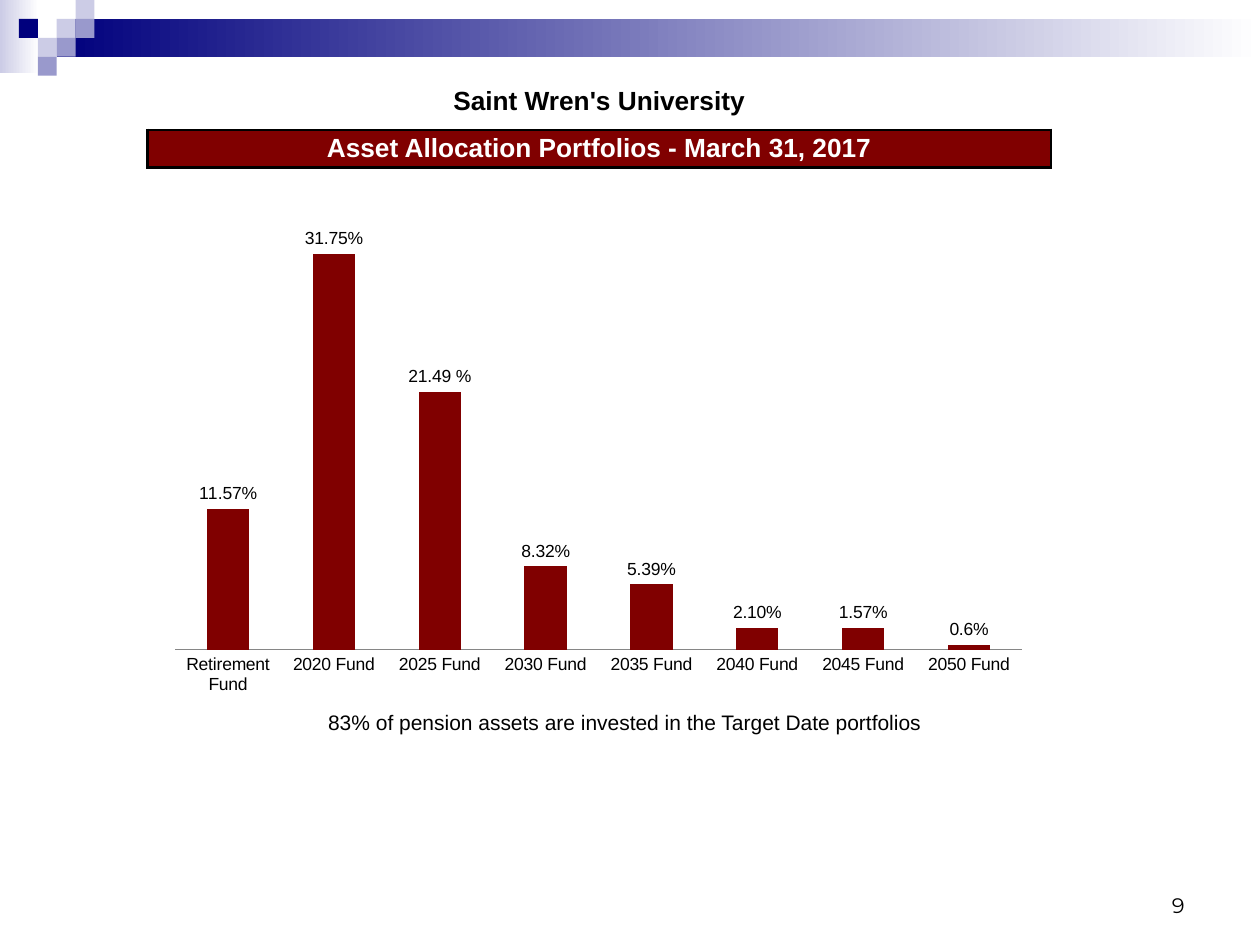
from pptx import Presentation, util as u
from pptx.chart import data as chart_data
from pptx.dml.color import RGBColor
from pptx.enum import chart as chart_enum, shapes, text
from pptx.oxml import parse_xml
from pptx.oxml.ns import nsdecls

NAVY, VIOLET, LILAC = "00007D", "9999CC", "CCCCE6"
MAROON, BLACK, WHITE = "800000", "000000", "FFFFFF"
TILE = 0.15  # grid unit of the corner pattern

FUNDS = [
    ("Retirement Fund", 0.142, "11.57%"),
    ("2020 Fund", 0.399, "31.75%"),
    ("2025 Fund", 0.26, "21.49 %"),
    ("2030 Fund", 0.084, "8.32%"),
    ("2035 Fund", 0.066, "5.39%"),
    ("2040 Fund", 0.022, "2.10%"),
    ("2045 Fund", 0.022, "1.57%"),
    ("2050 Fund", 0.005, "0.6%"),
]


def color(value):
    return RGBColor.from_string(value)


def inches(box):
    return [u.Inches(length) for length in box]


def format_font(font, size, name="Arial", ink=BLACK, bold=False):
    font.size, font.name, font.bold = u.Pt(size), name, bold
    font.color.rgb = color(ink)


def write(frame, words, align=text.PP_ALIGN.CENTER, **style):
    para = frame.paragraphs[0]
    para.alignment = align
    span = para.add_run()
    span.text = words
    format_font(span.font, **style)


def add_text(page, box, words, anchor=text.MSO_ANCHOR.TOP, **style):
    frame = page.shapes.add_textbox(*inches(box)).text_frame
    frame.word_wrap = True
    frame.vertical_anchor = anchor
    write(frame, words, **style)


def add_block(page, box, fill, fade_to=None):
    block = page.shapes.add_shape(shapes.MSO_SHAPE.RECTANGLE, *inches(box))
    block.shadow.inherit = False
    block.line.fill.background()
    if fade_to:
        block.fill.gradient()
        block.fill.gradient_angle = 0
        for stop, ink in zip(block.fill.gradient_stops, (fill, fade_to)):
            stop.color.rgb = color(ink)
    else:
        block.fill.solid()
        block.fill.fore_color.rgb = color(fill)


def add_banner(page, box):
    left, top, width, height = box
    # Fading bands
    add_block(page, (left, top, 0.31, height), LILAC, WHITE)
    add_block(page, (left + 3 * TILE, top + TILE, width - 3 * TILE, 2 * TILE),
              NAVY, WHITE)
    # Tiles by column and row
    tiles = [(3, 1, LILAC), (4, 0, LILAC), (4, 1, VIOLET), (2, 2, LILAC),
             (1, 1, NAVY), (3, 2, VIOLET), (2, 3, VIOLET)]
    for column, row, fill in tiles:
        add_block(page, (left + column * TILE, top + row * TILE, TILE, TILE), fill)


def set_border(cell, side, points):
    cell._tc.get_or_add_tcPr().append(parse_xml(
        f'<a:ln{side} {nsdecls("a")} w="{u.Pt(points)}"><a:solidFill>'
        f'<a:srgbClr val="{BLACK}"/></a:solidFill></a:ln{side}>'))


def add_heading(page, box):
    table = page.shapes.add_table(2, 1, *inches(box)).table
    table.first_row = table.horz_banding = False
    rows = [
        ("Saint Wren's University", 0.6, BLACK, None, "B"),
        ("Asset Allocation Portfolios - March 31, 2017", 0.4, WHITE, MAROON, "LRTB"),
    ]
    for index, (words, share, ink, fill, sides) in enumerate(rows):
        table.rows[index].height = u.Inches(box[3] * share)
        cell = table.cell(index, 0)
        cell.margin_left = cell.margin_right = 0
        cell.margin_top = cell.margin_bottom = 0
        cell.vertical_anchor = text.MSO_ANCHOR.MIDDLE
        for side in sides:
            set_border(cell, side, 1.5)
        if fill:
            cell.fill.solid()
            cell.fill.fore_color.rgb = color(fill)
        else:
            cell.fill.background()
        write(cell.text_frame, words, size=15, ink=ink, bold=True)


def add_fund_chart(page, box):
    names, values, captions = zip(*FUNDS)
    data = chart_data.CategoryChartData(number_format="0.0%")
    data.categories = names
    data.add_series("Series 1", values)
    chart = page.shapes.add_chart(
        chart_enum.XL_CHART_TYPE.COLUMN_CLUSTERED, *inches(box), data).chart
    chart.has_legend = chart.has_title = False
    format_font(chart.font, 10)

    # Axes
    chart.value_axis.visible = False
    chart.value_axis.has_major_gridlines = False
    chart.value_axis.minimum_scale = 0
    chart.value_axis.maximum_scale = 0.45
    chart.category_axis.major_tick_mark = chart_enum.XL_TICK_MARK.NONE
    chart.category_axis.format.line.color.rgb = color("868686")

    # Columns and their labels
    plot = chart.plots[0]
    plot.gap_width, plot.overlap = 150, -25
    plot.vary_by_categories = False
    series = plot.series[0]
    series.format.fill.solid()
    series.format.fill.fore_color.rgb = color(MAROON)
    labels = series.data_labels
    labels.show_value = True
    labels.number_format, labels.number_format_is_linked = "0.0%", False
    labels.position = chart_enum.XL_LABEL_POSITION.OUTSIDE_END
    for index, caption in enumerate(captions):
        label = series.points[index].data_label
        write(label.text_frame, caption, size=10)
        label.position = chart_enum.XL_LABEL_POSITION.OUTSIDE_END


def main():
    deck = Presentation()
    deck.slide_width, deck.slide_height = u.Inches(10), u.Inches(7.5)
    page = deck.slides.add_slide(deck.slide_layouts[6])
    add_banner(page, (0, 0, 10, 0.58))
    add_text(page, (7.17, 6.83, 2.33, 0.5), "9", text.MSO_ANCHOR.BOTTOM,
             align=text.PP_ALIGN.RIGHT, size=12, name="Montserrat")
    add_text(page, (0.67, 5.58, 8.58, 0.5),
             "83% of pension assets are invested in the Target Date portfolios",
             size=12)
    add_heading(page, (1.17, 0.58, 7.17, 0.75))
    add_fund_chart(page, (1.25, 1.53, 7, 4.06))
    deck.save("out.pptx")


if __name__ == "__main__":
    main()
